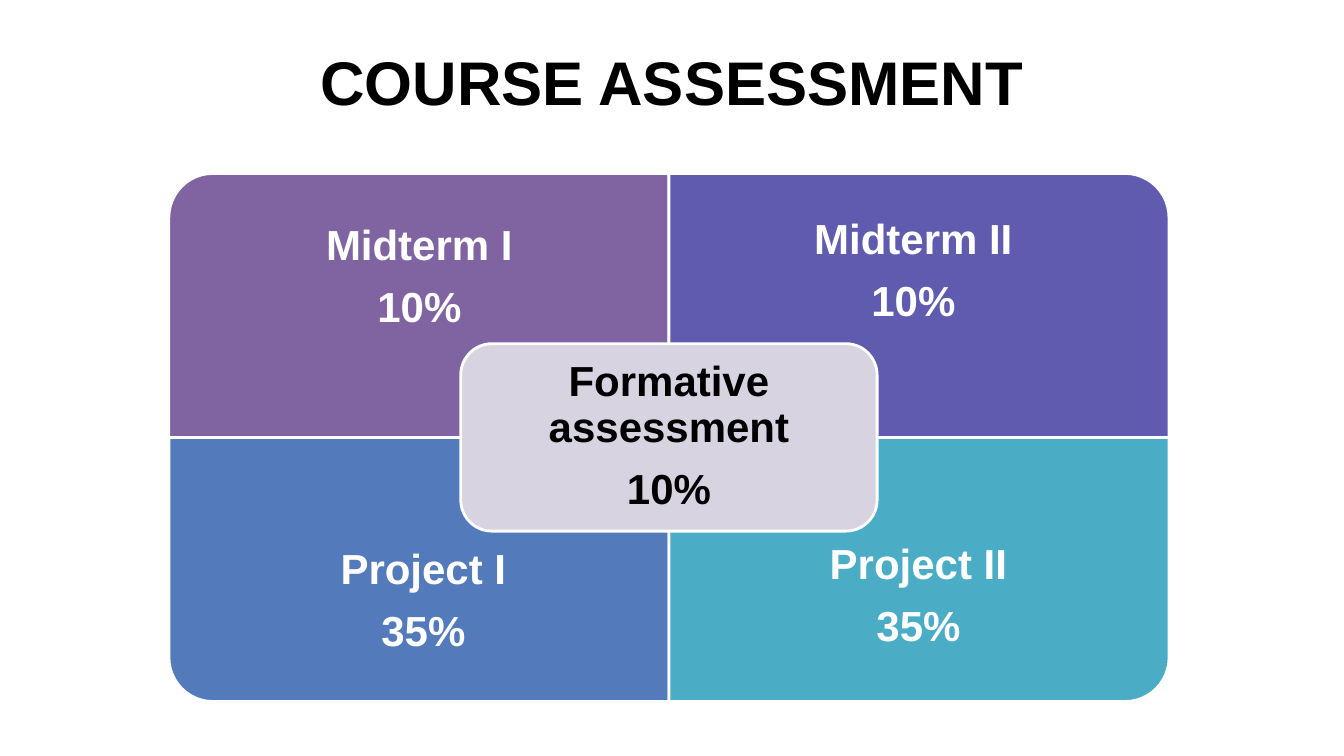
from pptx import Presentation
from pptx.dml.color import RGBColor
from pptx.enum.shapes import MSO_SHAPE
from pptx.enum.text import MSO_ANCHOR, MSO_AUTO_SIZE, PP_ALIGN
from pptx.util import Inches, Pt

WHITE, BLACK = "FFFFFF", "000000"


def color(hex_string):
    return RGBColor.from_string(hex_string)


class AssessmentSlide:
    """Holds the text style and the slide being built."""

    font_name = "Arial"
    title_size = 44
    label_size = 30

    def __init__(self, presentation):
        self.slide = presentation.slides.add_slide(presentation.slide_layouts[5])
        background = self.slide.background.fill
        background.solid()
        background.fore_color.rgb = color(WHITE)

    def format_paragraph(self, paragraph, size, text_color):
        paragraph.alignment = PP_ALIGN.CENTER
        for run in paragraph.runs:
            run.font.name = self.font_name
            run.font.size = Pt(size)
            run.font.bold = True
            run.font.color.rgb = color(text_color)

    def title(self, text, left, top, width, height):
        shape = self.slide.shapes.title
        shape.left, shape.top = Inches(left), Inches(top)
        shape.width, shape.height = Inches(width), Inches(height)
        text_frame = shape.text_frame
        text_frame.text = text
        text_frame.auto_size = MSO_AUTO_SIZE.NONE
        text_frame.vertical_anchor = MSO_ANCHOR.TOP
        text_frame.margin_top = Inches(0.12)
        self.format_paragraph(text_frame.paragraphs[0], self.title_size, BLACK)

    def panel(self, kind, center_x, center_y, width, height, fill, rotation=0):
        shape = self.slide.shapes.add_shape(
            kind, Inches(center_x - width / 2), Inches(center_y - height / 2),
            Inches(width), Inches(height))
        shape.rotation = rotation
        shape.shadow.inherit = False
        shape.fill.solid()
        shape.fill.fore_color.rgb = color(fill)
        shape.line.color.rgb = color(WHITE)
        shape.line.width = Pt(2)

    def label(self, lines, frame, text_color, margin):
        box = self.slide.shapes.add_textbox(*map(Inches, frame))
        text_frame = box.text_frame
        text_frame.word_wrap = True
        text_frame.vertical_anchor = MSO_ANCHOR.MIDDLE
        text_frame.margin_left = text_frame.margin_right = Inches(margin)
        text_frame.margin_top = text_frame.margin_bottom = Inches(margin)
        text_frame.text = "\n".join(lines)
        for paragraph in text_frame.paragraphs:
            paragraph.line_spacing = 0.9
            paragraph.space_after = Pt(12)
            self.format_paragraph(paragraph, self.label_size, text_color)


def main():
    presentation = Presentation()
    presentation.slide_width = Inches(13.33)
    presentation.slide_height = Inches(7.5)
    slide = AssessmentSlide(presentation)

    slide.title("COURSE ASSESSMENT", 2.08, 0.32, 9.17, 0.44)

    # Four quadrants around the middle, each with its outer corner rounded
    middle_x, middle_y = 6.635, 4.34
    width, height = 4.96, 2.62
    quadrants = [
        # name, share, fill, column side, row side, rotation, label frame
        ("Midterm I", "10%", "8064A2", -1, -1, 270, (1.68, 1.82, 4.96, 1.87)),
        ("Midterm II", "10%", "5F5BAE", 1, -1, 0, (6.63, 1.72, 4.86, 1.96)),
        ("Project I", "35%", "537ABA", -1, 1, 180, (1.77, 4.99, 4.86, 1.96)),
        ("Project II", "35%", "4BACC6", 1, 1, 90, (6.63, 4.99, 4.96, 1.87)),
    ]
    for name, share, fill, side_x, side_y, rotation, frame in quadrants:
        # A quarter turn swaps the sides of the unrotated shape
        size = (height, width) if rotation % 180 else (width, height)
        slide.panel(MSO_SHAPE.ROUND_1_RECTANGLE, middle_x + side_x * width / 2,
                    middle_y + side_y * height / 2, *size, fill, rotation)
        slide.label((name, share), frame, WHITE, 0.23)

    # Central panel
    slide.panel(MSO_SHAPE.ROUNDED_RECTANGLE, middle_x, middle_y, 4.13, 1.86, "D8D3E0")
    slide.label(("Formative assessment", "10%"), (4.66, 3.5, 3.95, 1.67), BLACK, 0.12)

    presentation.save("out.pptx")


if __name__ == "__main__":
    main()
